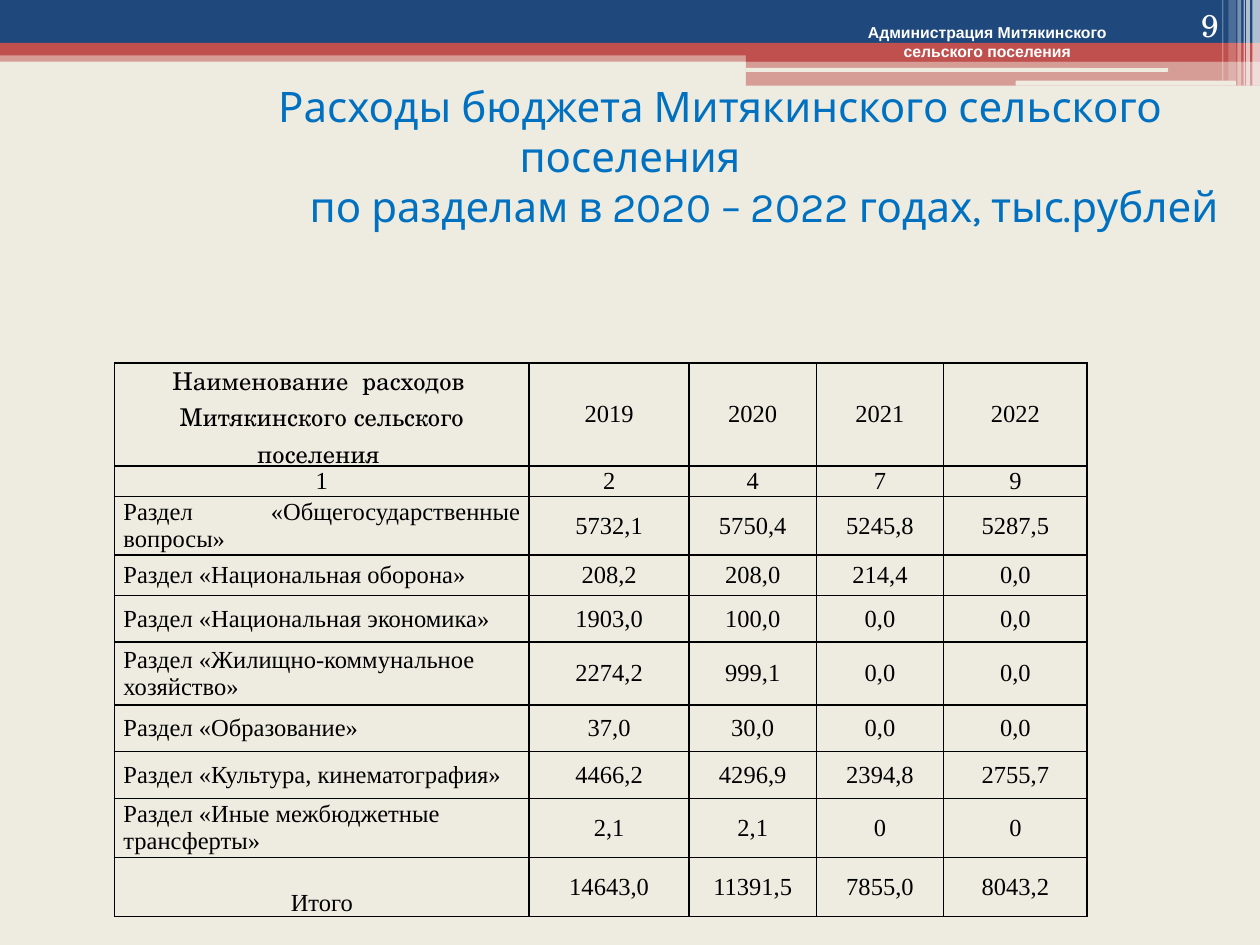
from lxml import etree
from pptx import Presentation
from pptx.dml.color import RGBColor
from pptx.enum.shapes import MSO_SHAPE
from pptx.enum.text import MSO_ANCHOR, PP_ALIGN
from pptx.oxml.ns import qn
from pptx.util import Inches, Pt

RECT, ROUNDED = MSO_SHAPE.RECTANGLE, MSO_SHAPE.ROUNDED_RECTANGLE
TOP, MIDDLE, BOTTOM = MSO_ANCHOR.TOP, MSO_ANCHOR.MIDDLE, MSO_ANCHOR.BOTTOM
LEFT, CENTER, RIGHT = PP_ALIGN.LEFT, PP_ALIGN.CENTER, PP_ALIGN.RIGHT
JUSTIFY = PP_ALIGN.JUSTIFY

CREAM, NAVY, RED, WHITE = "EEECE1", "1F497D", "C0504D", "FFFFFF"
BLUE, BLACK = "0070C0", "000000"
SERIF, SCHOOL, SANS, TITLE_FONT = "Times New Roman", "TeX Gyre Schola", "Arial", "Karla"

TITLE_LINES = [  # text, left indent in inches
    ("Расходы бюджета Митякинского сельского", 1.43),
    ("поселения", 0),
    ("по разделам в 2020 – 2022 годах, тыс.рублей", 2.13),
]
COLUMN_WIDTHS = [3.29, 1.27, 1.01, 1.01, 1.14]
ROW_HEIGHTS = [0.82, 0.24, 0.46, 0.32, 0.37, 0.5, 0.37, 0.37, 0.47, 0.47]
EXPENSES = [
    ["Наименование  расходов  Митякинского сельского поселения ", "2019", "2020", "2021", "2022"],
    ["1", "2", "4", "7", "9"],
    ["Раздел «Общегосударственные вопросы» ", "5732,1", "5750,4", "5245,8", "5287,5"],
    ["Раздел «Национальная оборона»", "208,2", "208,0", "214,4", "0,0"],
    ["Раздел «Национальная экономика»", "1903,0", "100,0", "0,0", "0,0"],
    ["Раздел «Жилищно-коммунальное хозяйство»", "2274,2", "999,1", "0,0", "0,0"],
    ["Раздел «Образование»", "37,0", "30,0", "0,0", "0,0"],
    ["Раздел «Культура, кинематография»", "4466,2", "4296,9", "2394,8", "2755,7"],
    ["Раздел «Иные межбюджетные трансферты»", "2,1", "2,1", "0", "0"],
    ["Итого", "14643,0", "11391,5", "7855,0", "8043,2"],
]


def rgb(value):
    return RGBColor.from_string(value)


def write(frame, lines, size=14, font=SERIF, color=BLACK, bold=False, align=CENTER):
    for index, line in enumerate(lines):
        paragraph = frame.paragraphs[0] if index == 0 else frame.add_paragraph()
        paragraph.alignment = align
        run = paragraph.add_run()
        run.text = line
        run.font.size, run.font.name, run.font.bold = Pt(size), font, bold
        run.font.color.rgb = rgb(color)


def add_bar(slide, box, color, opacity=100, kind=RECT):
    bar = slide.shapes.add_shape(kind, *map(Inches, box))
    bar.shadow.inherit = False
    bar.line.fill.background()
    bar.fill.solid()
    bar.fill.fore_color.rgb = rgb(color)
    if opacity < 100:
        tint = bar.fill._xPr.find(".//" + qn("a:srgbClr"))
        etree.SubElement(tint, qn("a:alpha"), val=str(opacity * 1000))


def add_header_band(slide, left, top, width):
    # Full-width stripes
    add_bar(slide, (left, top + 0.4, width, 0.09), RED, 50)
    add_bar(slide, (left, top, width, 0.34), NAVY)
    add_bar(slide, (left, top + 0.34, width, 0.1), RED)
    # Stepped block on the right
    block = left + 5.92
    add_bar(slide, (block, top + 0.39, width - 5.92, 0.1), RED)
    add_bar(slide, (block, top + 0.48, width - 5.92, 0.2), RED, 50)
    add_bar(slide, (block, top + 0.54, 3.35, 0.03), CREAM, kind=ROUNDED)
    add_bar(slide, (left + 8.06, top + 0.64, 1.75, 0.04), CREAM, kind=ROUNDED)
    # Translucent vertical lines, placed from the right edge
    for inset, line_width, height, opacity in [
        (0.06, 0.06, 0.68, 65), (0.11, 0.03, 0.68, 65), (0.13, 0.01, 0.68, 60),
        (0.18, 0.03, 0.68, 40), (0.25, 0.06, 0.64, 20), (0.3, 0.01, 0.64, 30),
    ]:
        add_bar(slide, (left + width - inset, top, line_width, height), WHITE, opacity)


def add_title(slide, left, top, width, height):
    title = slide.shapes.title
    title.left, title.top, title.width, title.height = map(Inches, (left, top, width, height))
    frame = title.text_frame
    frame.word_wrap, frame.vertical_anchor = True, MIDDLE
    write(frame, [line for line, _ in TITLE_LINES], size=24, font=TITLE_FONT, color=BLUE)
    for paragraph, (_, indent) in zip(frame.paragraphs, TITLE_LINES):
        properties = paragraph._p.get_or_add_pPr()
        properties.set("marL", str(Inches(indent)))
        properties.set("indent", "0")


def add_label(slide, box, lines, anchor=TOP, **text_format):
    frame = slide.shapes.add_textbox(*map(Inches, box)).text_frame
    frame.word_wrap, frame.vertical_anchor = True, anchor
    write(frame, lines, color=WHITE, **text_format)


def add_cell_borders(cell):
    properties = cell._tc.get_or_add_tcPr()
    for side in ("lnL", "lnR", "lnT", "lnB"):
        border = etree.SubElement(properties, qn("a:" + side), w=str(Pt(1)))
        fill = etree.SubElement(border, qn("a:solidFill"))
        etree.SubElement(fill, qn("a:srgbClr"), val=BLACK)


def name_alignment(row):
    if row in (0, 1, len(EXPENSES) - 1):
        return CENTER
    return JUSTIFY if row == 2 else LEFT


def add_expense_table(slide, left, top):
    box = (left, top, sum(COLUMN_WIDTHS), sum(ROW_HEIGHTS))
    table = slide.shapes.add_table(
        len(EXPENSES), len(COLUMN_WIDTHS), *map(Inches, box)).table
    table.first_row = table.horz_banding = False
    for column, width in zip(table.columns, COLUMN_WIDTHS):
        column.width = Inches(width)
    for row, (values, height) in enumerate(zip(EXPENSES, ROW_HEIGHTS)):
        table.rows[row].height = Inches(height)
        for col, value in enumerate(values):
            cell = table.cell(row, col)
            cell.margin_left = cell.margin_right = Inches(0.07)
            cell.margin_top = cell.margin_bottom = 0
            is_total_name = col == 0 and row == len(EXPENSES) - 1
            cell.vertical_anchor = BOTTOM if is_total_name else MIDDLE
            add_cell_borders(cell)
            cell.fill.background()
            write(cell.text_frame, [value],
                  font=SCHOOL if row == col == 0 else SERIF,
                  align=CENTER if col else name_alignment(row))


def main():
    deck = Presentation()
    deck.slide_width, deck.slide_height = Inches(10), Inches(7.5)
    slide = deck.slides.add_slide(deck.slide_layouts[5])
    slide.background.fill.solid()
    slide.background.fill.fore_color.rgb = rgb(CREAM)

    add_header_band(slide, 0, 0, 10)
    add_title(slide, 0, 0.84, 10, 0.79)
    # Organisation and page number
    add_label(slide, (6.28, 0.13, 3.11, 0.4),
              ["Администрация Митякинского", "сельского поселения"],
              size=9, font=SANS, bold=True)
    add_label(slide, (8.94, 0, 0.83, 0.4), ["9"], anchor=BOTTOM,
              size=18, font=SCHOOL, align=RIGHT)
    add_expense_table(slide, 0.91, 2.88)
    deck.save("out.pptx")


if __name__ == "__main__":
    main()
